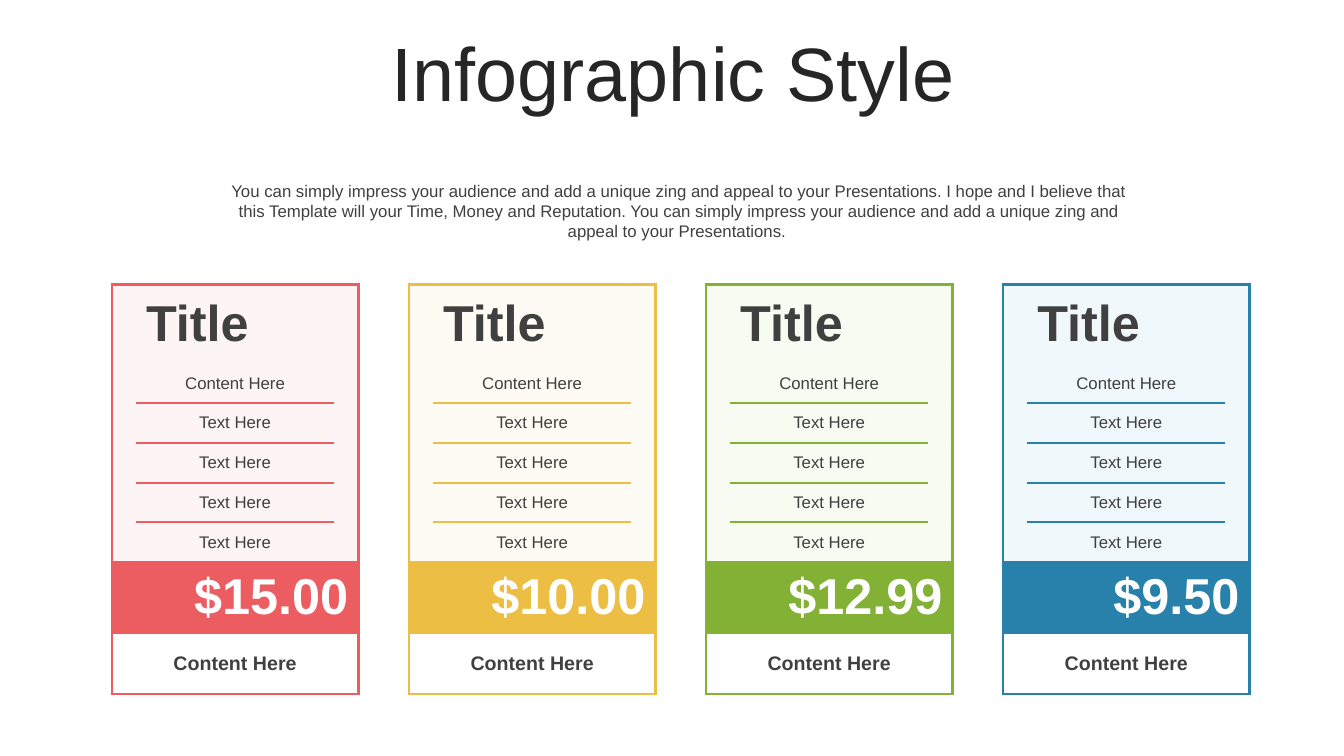
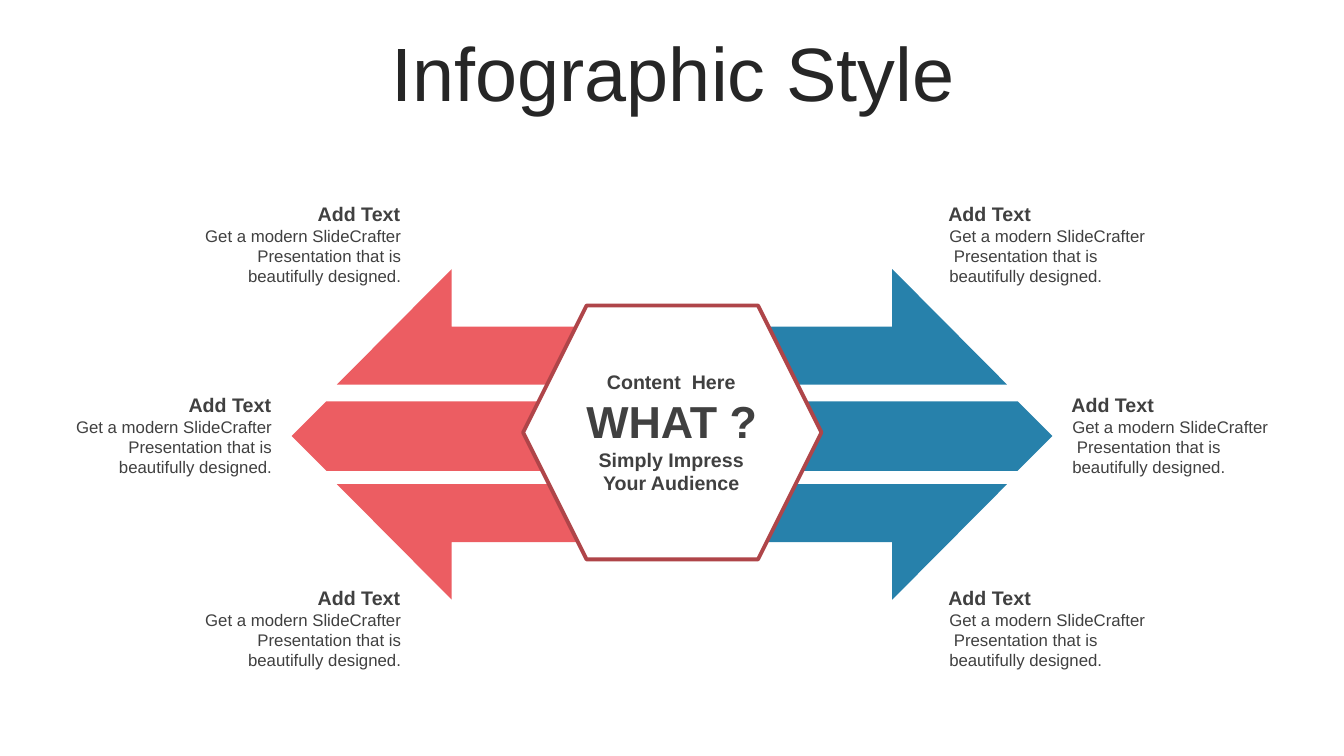
"""Build a two-slide deck: a pricing comparison and a six-arrow hexagon diagram."""
from lxml import etree
from pptx import Presentation
from pptx.dml.color import RGBColor
from pptx.enum.shapes import MSO_SHAPE
from pptx.enum.text import MSO_ANCHOR, MSO_AUTO_SIZE, PP_ALIGN
from pptx.oxml.ns import qn
from pptx.util import Pt

LEFT, CENTER, RIGHT = PP_ALIGN.LEFT, PP_ALIGN.CENTER, PP_ALIGN.RIGHT
TOP, MIDDLE = MSO_ANCHOR.TOP, MSO_ANCHOR.MIDDLE
FIT_SHAPE, NO_FIT = MSO_AUTO_SIZE.SHAPE_TO_FIT_TEXT, MSO_AUTO_SIZE.NONE
PENTAGON, HEXAGON = MSO_SHAPE.PENTAGON, MSO_SHAPE.HEXAGON
TITLE_ONLY = 5

COLORS = {
    "title": "262626", "text": "404040", "white": "FFFFFF", "outline": "AF4549",
    "red": "EC5D62", "yellow": "EDBE44", "green": "82B135", "blue": "2781AB",
    "pale red": "FBDFE0", "pale yellow": "FBF2DA",
    "pale green": "E7F2D4", "pale blue": "CEE8F4",
}
FORMATS = {
    "title": {"size": Pt(54), "bold": False},
    "huge": {"size": Pt(36), "bold": True},
    "question": {"size": Pt(32), "bold": True},
    "heading": {"size": Pt(14), "bold": True},
    "body": {"size": Pt(12), "bold": False},
}
SLIDE_WIDTH, SLIDE_HEIGHT = 960, 540

CARD_LEFT, CARD_TOP, CARD_STEP = 79.9, 203, 212.2
CARD_COLUMNS = [16.4, 141.6, 16.4]
CARD_ROWS = [56.7] + [28.35] * 5 + [50.4, 43.9]
CARD_LINES = ["Title", "Content Here"] + ["Text Here"] * 4
PRICE_ROW, FOOT_ROW = 6, 7
PRICES = {"red": "$15.00", "yellow": "$10.00", "green": "$12.99", "blue": "$9.50"}
INTRO = (
    "You can simply impress your audience and add a unique zing and appeal to your "
    "Presentations. I hope and I believe that this Template will your Time, Money and "
    "Reputation. You can simply impress your audience and add a unique zing and appeal "
    "to your Presentations. "
)

ARROW_AXIS = 310.3
ARROW_INNER, ARROW_NECK, ARROW_TIP = 14.7, 157.3, 239.3
ARROW_NEAR, ARROW_EDGE, ARROW_FAR = 35.6, 77, 118.1
PENTAGON_TOP, PENTAGON_WIDTH, PENTAGON_HEIGHT = 286.6, 257, 49.7
CALLOUT_TOPS = [140.4, 277.2, 414.7]
CALLOUTS = {RIGHT: [136.8, 44.6, 136.8], LEFT: [670.3, 758.2, 670.3]}
CALLOUT_TEXT = "Get a modern SlideCrafter  Presentation that is beautifully designed."


class Deck:
    """Hold the style and the current slide, with a method for each kind of element."""

    def __init__(self):
        self.presentation = Presentation()
        self.presentation.slide_width = Pt(SLIDE_WIDTH)
        self.presentation.slide_height = Pt(SLIDE_HEIGHT)
        self.slide = None

    def color(self, name):
        return RGBColor.from_string(COLORS[name])

    def add_lines(self, frame, lines, style, align, color="text"):
        for index, line in enumerate(lines):
            paragraph = frame.add_paragraph() if index else frame.paragraphs[0]
            paragraph.alignment = align
            run = paragraph.add_run()
            run.text = line
            run.font.name = "Arial"
            run.font.color.rgb = self.color(color)
            for attribute, value in FORMATS[style].items():
                setattr(run.font, attribute, value)

    def new_slide(self, title):
        layout = self.presentation.slide_layouts[TITLE_ONLY]
        self.slide = self.presentation.slides.add_slide(layout)
        shape = self.slide.shapes.title
        box = {"left": 25.2, "top": 26.6, "width": 911.5, "height": 56.9}
        for attribute, value in box.items():
            setattr(shape, attribute, Pt(value))
        frame = shape.text_frame
        frame.word_wrap = True
        frame.auto_size = NO_FIT
        frame.vertical_anchor = MIDDLE
        self.add_lines(frame, [title], "title", CENTER, "title")
        frame.paragraphs[0].line_spacing = 0.9
        frame.paragraphs[0].space_before = Pt(0)

    def text(self, box, lines, style, align, anchor=TOP):
        frame = self.slide.shapes.add_textbox(*map(Pt, box)).text_frame
        frame.word_wrap = True
        frame.auto_size = FIT_SHAPE
        frame.vertical_anchor = anchor
        self.add_lines(frame, lines, style, align)

    def paint(self, shape, fill, line=None, width=0):
        shape.shadow.inherit = False
        shape.fill.solid()
        shape.fill.fore_color.rgb = self.color(fill)
        if line:
            shape.line.color.rgb = self.color(line)
            shape.line.width = Pt(width)
        else:
            shape.line.fill.background()

    def shape(self, kind, box, fill, line=None, width=0):
        shape = self.slide.shapes.add_shape(kind, *map(Pt, box))
        self.paint(shape, fill, line, width)
        return shape

    def outline(self, points, fill):
        corners = [(Pt(x), Pt(y)) for x, y in points]
        builder = self.slide.shapes.build_freeform(*corners[0])
        builder.add_line_segments(corners[1:], close=True)
        self.paint(builder.convert_to_shape(), fill)

    def borders(self, cell, color, widths):
        properties = cell._tc.get_or_add_tcPr()
        for edge in "LRTB":
            width = widths.get(edge, 0)
            line = etree.SubElement(properties, qn(f"a:ln{edge}"), w=str(Pt(width)))
            if width:
                fill = etree.SubElement(line, qn("a:solidFill"))
                etree.SubElement(fill, qn("a:srgbClr"), val=COLORS[color])
            else:
                etree.SubElement(line, qn("a:noFill"))

    def fill_cell(self, cell, color, opacity=100):
        cell.fill.solid()
        cell.fill.fore_color.rgb = self.color(color)
        if opacity < 100:
            tint = cell._tc.tcPr.find(f"{qn('a:solidFill')}/{qn('a:srgbClr')}")
            etree.SubElement(tint, qn("a:alpha"), val=str(opacity * 1000))

    def card(self, left, color, price):
        box = (left, CARD_TOP, sum(CARD_COLUMNS), sum(CARD_ROWS))
        frame = self.slide.shapes.add_table(
            len(CARD_ROWS), len(CARD_COLUMNS), *map(Pt, box))
        table = frame.table
        table.first_row = table.horz_banding = False
        for column, width in zip(table.columns, CARD_COLUMNS):
            column.width = Pt(width)
        for row_index, height in enumerate(CARD_ROWS):
            table.rows[row_index].height = Pt(height)
            for column_index in range(len(CARD_COLUMNS)):
                cell = table.cell(row_index, column_index)
                cell.margin_top = cell.margin_bottom = 0
                cell.vertical_anchor = MIDDLE
                self.borders(cell, color, card_edges(row_index, column_index))
                if row_index < PRICE_ROW:
                    self.fill_cell(cell, f"pale {color}", 30)
                else:
                    self.fill_cell(cell, color if row_index == PRICE_ROW else "white")
        for row_index, line in enumerate(CARD_LINES):
            style, align = ("body", CENTER) if row_index else ("huge", LEFT)
            self.add_lines(table.cell(row_index, 1).text_frame, [line], style, align)
        for row_index in (PRICE_ROW, FOOT_ROW):
            table.cell(row_index, 0).merge(table.cell(row_index, 2))
        price_frame = table.cell(PRICE_ROW, 0).text_frame
        self.add_lines(price_frame, [price], "huge", RIGHT, "white")
        foot_frame = table.cell(FOOT_ROW, 0).text_frame
        self.add_lines(foot_frame, ["Content Here"], "heading", CENTER)

    def arrows(self, side, color):
        middle = SLIDE_WIDTH / 2
        inner, neck, tip = (
            middle + side * offset for offset in (ARROW_INNER, ARROW_NECK, ARROW_TIP))
        for direction in (-1, 1):
            near, edge, far = (
                ARROW_AXIS + direction * offset
                for offset in (ARROW_NEAR, ARROW_EDGE, ARROW_FAR))
            self.outline([(neck, far), (tip, near), (inner, near),
                          (inner, edge), (neck, edge)], color)
        left = inner if side > 0 else inner - PENTAGON_WIDTH
        pentagon = self.shape(
            PENTAGON, (left, PENTAGON_TOP, PENTAGON_WIDTH, PENTAGON_HEIGHT), color)
        pentagon.rotation = 0 if side > 0 else 180

    def callout(self, left, top, align):
        self.text((left, top, 156.2, 24.2), ["Add Text"], "heading", align)
        self.text((left + 0.7, top + 17, 156.2, 50.9), [CALLOUT_TEXT], "body", align)


def card_edges(row, column):
    if row == PRICE_ROW:
        return {"L": 2.25, "R": 2.25, "T": 2.25, "B": 3}
    if row == FOOT_ROW:
        return {"L": 2.25, "R": 2.25, "T": 3, "B": 2.25}
    edges = {}
    if column == 1:
        edges = {"T": 1.5 if row > 1 else 0, "B": 1.5 if row > 0 else 0}
    else:
        edges["L" if column == 0 else "R"] = 2.25
    if row == 0:
        edges["T"] = 2.25
    if row == PRICE_ROW - 1:
        edges["B"] = 2.25
    return edges


def build_pricing(deck):
    deck.new_slide("Infographic Style")
    for index, (color, price) in enumerate(PRICES.items()):
        deck.card(CARD_LEFT + index * CARD_STEP, color, price)
    deck.text((148.3, 125.3, 673.9, 50.9), [INTRO], "body", CENTER)


def build_diagram(deck):
    deck.new_slide("Infographic Style")
    deck.arrows(1, "blue")
    deck.arrows(-1, "red")
    hexagon = deck.shape(HEXAGON, (373.7, 218.2, 213.1, 181.4), "white", "outline", 2.75)
    hexagon.adjustments[0] = 0.25
    deck.text((393.1, 277.2, 173.5, 46.1), ["WHAT ?"], "question", CENTER, MIDDLE)
    deck.text((400.3, 260.6, 158.4, 24.2), ["Content  Here"], "heading", CENTER, MIDDLE)
    deck.text((400.3, 316.1, 158.4, 41.2), ["Simply Impress", "Your Audience"],
              "heading", CENTER, MIDDLE)
    for align, lefts in CALLOUTS.items():
        for left, top in zip(lefts, CALLOUT_TOPS):
            deck.callout(left, top, align)


def main():
    deck = Deck()
    build_pricing(deck)
    build_diagram(deck)
    deck.presentation.save("out.pptx")


if __name__ == "__main__":
    main()
